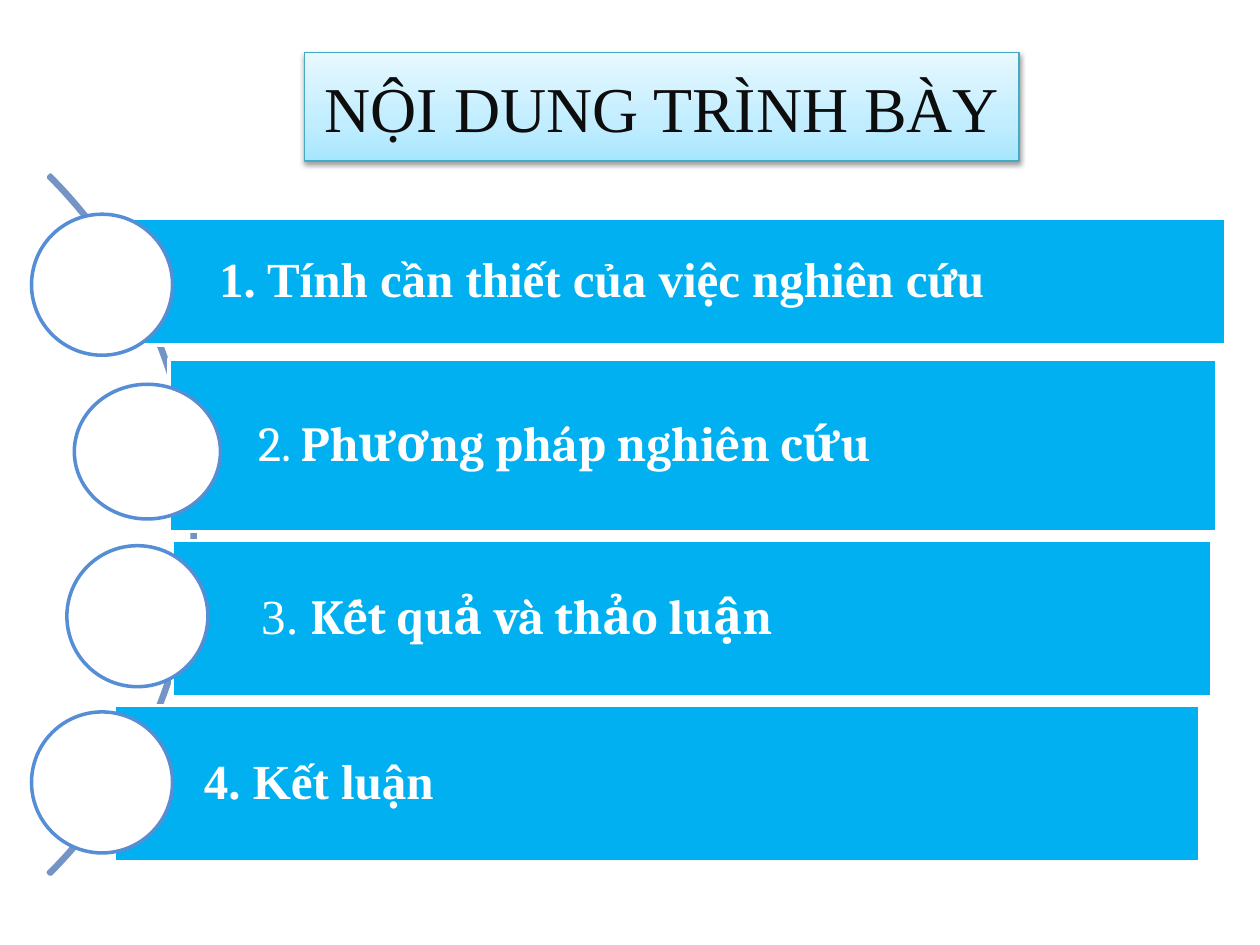
from lxml import etree
from pptx import Presentation
from pptx.dml.color import RGBColor
from pptx.enum.shapes import MSO_SHAPE
from pptx.enum.text import MSO_ANCHOR, PP_ALIGN
from pptx.oxml.ns import qn
from pptx.util import Pt

RECT, OVAL, ARC = MSO_SHAPE.RECTANGLE, MSO_SHAPE.OVAL, MSO_SHAPE.BLOCK_ARC
MIDDLE, LEFT, CENTER = MSO_ANCHOR.MIDDLE, PP_ALIGN.LEFT, PP_ALIGN.CENTER

WHITE = RGBColor(0xFF, 0xFF, 0xFF)
INK = RGBColor(0x0D, 0x0D, 0x0D)
SKY = RGBColor(0x00, 0xB0, 0xF0)
BLUE = RGBColor(0x55, 0x8E, 0xD5)
STEEL = RGBColor(0x73, 0x94, 0xC5)
TEAL = RGBColor(0x46, 0xAA, 0xC5)
BLACK = RGBColor(0x00, 0x00, 0x00)
# Title gradient, from bottom to top
STOPS = [(0, RGBColor(0xA7, 0xE6, 0xFF)),
         (35, RGBColor(0xC1, 0xED, 0xFF)),
         (100, RGBColor(0xE7, 0xF8, 0xFF))]

TIMES, CAMBRIA = "Times New Roman", "Cambria"

# Bar box, circle box, runs as (text, font, bold)
ROWS = [
    ((74.2, 124.6, 626.4, 72.7), (18, 122.4, 80.6, 80.6),
     [("1. Tính cần thiết của việc nghiên cứu", TIMES, True)]),
    ((96.5, 205.2, 599, 98.6), (42.5, 219.6, 83.5, 77),
     [("2. ", CAMBRIA, False), ("Phương pháp nghiên cứu", CAMBRIA, True)]),
    ((98.6, 308.9, 594, 89.3), (38.2, 311.8, 80.6, 80.6),
     [("3. ", TIMES, False), ("Kết quả và thảo luận", CAMBRIA, True)]),
    ((65.5, 403.2, 619.9, 89.3), (18, 406.8, 80.6, 80.6),
     [("4. Kết luận", TIMES, True)]),
]


def add_text(shape, runs, size, color, align=LEFT, inset=None, space=None):
    frame = shape.text_frame
    frame.word_wrap = True
    frame.vertical_anchor = MIDDLE
    if inset:
        (frame.margin_left, frame.margin_top, frame.margin_right,
         frame.margin_bottom) = [Pt(n) for n in inset]
    para = frame.paragraphs[0]
    para.alignment = align
    if space:
        para.line_spacing = space
    for text, face, bold in runs:
        run = para.add_run()
        run.text = text
        run.font.name, run.font.size, run.font.bold = face, Pt(size), bold
        run.font.color.rgb = color


def add_part(slide, kind, box, fill, line):
    part = slide.shapes.add_shape(kind, *[Pt(n) for n in box])
    part.shadow.inherit = False
    part.fill.solid()
    part.fill.fore_color.rgb = fill
    part.line.color.rgb = line
    part.line.width = Pt(2)
    return part


def add_color(parent, color):
    return etree.SubElement(parent, qn("a:srgbClr"), val=str(color))


def add_title(slide, box):
    title = slide.shapes.title
    title.left, title.top, title.width, title.height = [Pt(n) for n in box]
    add_text(title, [("NỘI DUNG TRÌNH BÀY", TIMES, False)], 36.5, INK,
             align=CENTER)
    title.text_frame.word_wrap = False
    title.line.color.rgb = TEAL
    title.line.width = Pt(0.75)

    # Three-stop gradient
    title.fill.gradient()
    title.fill.gradient_angle = 90
    props = title._element.spPr
    stops = props.find(qn("a:gradFill")).find(qn("a:gsLst"))
    for old in list(stops):
        stops.remove(old)
    for pos, color in STOPS:
        stop = etree.SubElement(stops, qn("a:gs"), pos=str(pos * 1000))
        add_color(stop, color)

    # Soft shadow below
    title.shadow.inherit = False
    effects = props.find(qn("a:effectLst"))
    shade = etree.SubElement(
        effects, qn("a:outerShdw"), blurRad=str(Pt(3.1)), dist=str(Pt(1.6)),
        dir="5400000", rotWithShape="0")
    etree.SubElement(add_color(shade, BLACK), qn("a:alpha"), val="38000")


def add_arc(slide, box):
    arc = add_part(slide, ARC, box, SKY, STEEL)
    for i, value in enumerate((189, 27, 0.003)):
        arc.adjustments[i] = value


def add_row(slide, box, dot, runs):
    bar = add_part(slide, RECT, box, SKY, WHITE)
    add_text(bar, runs, 28, WHITE, inset=(51, 5.6, 5.6, 5.6), space=0.9)
    add_part(slide, OVAL, dot, WHITE, BLUE)


def main():
    deck = Presentation()
    deck.slide_width, deck.slide_height = Pt(720), Pt(540)
    slide = deck.slides.add_slide(deck.slide_layouts[5])
    add_title(slide, (174.2, 30.2, 408.2, 61.9))
    add_arc(slide, (-453.6, 17.3, 565.2, 565.2))
    for box, dot, runs in ROWS:
        add_row(slide, box, dot, runs)
    deck.save("out.pptx")


if __name__ == "__main__":
    main()
